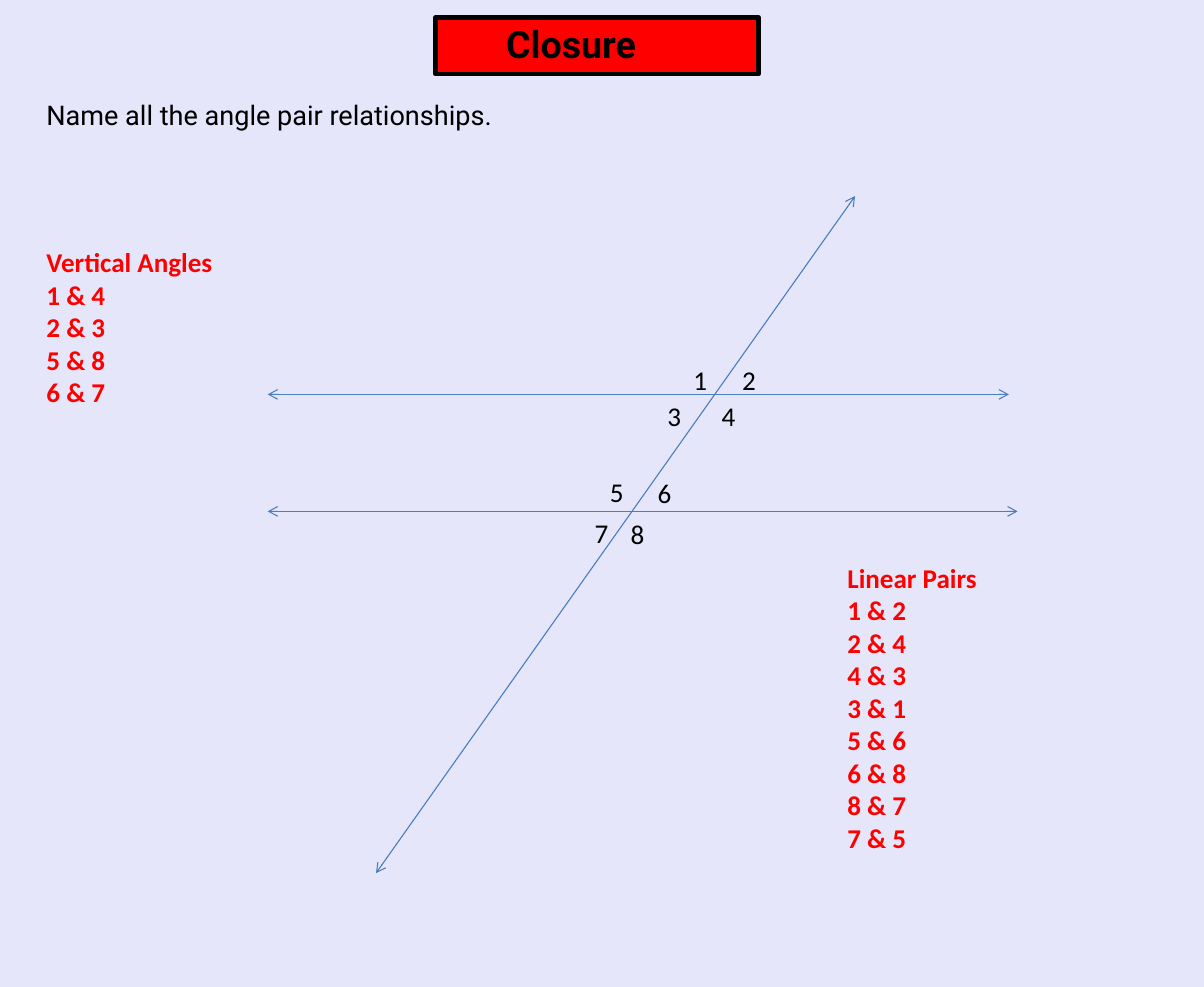
from lxml.etree import SubElement
from pptx import Presentation
from pptx.dml.color import RGBColor
from pptx.enum.shapes import MSO_CONNECTOR as Connector
from pptx.enum.text import MSO_ANCHOR as Anchor, MSO_AUTO_SIZE as AutoSize, PP_ALIGN as Align
from pptx.oxml.ns import qn
from pptx.util import Inches, Pt

COLORS = {"background": "E6E6FA", "banner": "FF0000", "ink": "000000",
          "line": "4B7EBC", "answer": "FF0000"}
TITLE = {"name": "Roboto", "size": Pt(25), "bold": True}
PROMPT = {"name": "Roboto", "size": Pt(18), "bold": False}
LABEL = {"name": "Calibri", "size": Pt(18), "bold": False}
ANSWER = {"name": "Calibri", "size": Pt(18), "bold": True}
GRID = 100  # columns across and rows down the slide

UPPER_ROW, LOWER_ROW = 39.96, 51.81
LINES = [
    ((22.23, UPPER_ROW), (83.8, UPPER_ROW)),
    ((22.23, LOWER_ROW), (84.52, LOWER_ROW)),
    ((71.02, 19.87), (31.23, 88.47)),
]
ANGLE_LABELS = {
    "1": (56.71, 36.33), "2": (60.76, 36.33),
    "3": (54.55, UPPER_ROW), "4": (59.05, UPPER_ROW),
    "5": (49.77, 47.64), "6": (53.74, 47.75),
    "7": (48.51, LOWER_ROW), "8": (51.49, 51.92),
}
VERTICAL_PAIRS = ["1 & 4", "2 & 3", "5 & 8", "6 & 7"]
LINEAR_PAIRS = ["1 & 2", "2 & 4", "4 & 3", "3 & 1",
                "5 & 6", "6 & 8", "8 & 7", "7 & 5"]


def color(name):
    return RGBColor.from_string(COLORS[name])


def apply(target, values):
    for name, value in values.items():
        setattr(target, name, value)


class LessonSlide:
    """Style and current slide; positions are in grid columns and rows."""

    def __init__(self, presentation):
        self.column = presentation.slide_width / GRID
        self.row = presentation.slide_height / GRID
        self.slide = presentation.slides.add_slide(presentation.slide_layouts[5])
        fill = self.slide.background.fill
        fill.solid()
        fill.fore_color.rgb = color("background")

    def point(self, column, row):
        return round(column * self.column), round(row * self.row)

    def fill_frame(self, frame, lines, style, ink="ink"):
        for index, line in enumerate(lines):
            paragraph = frame.add_paragraph() if index else frame.paragraphs[0]
            paragraph.alignment = Align.LEFT
            run = paragraph.add_run()
            run.text = line
            apply(run.font, style)
            run.font.color.rgb = color(ink)

    def title(self, text, position, size):
        shape = self.slide.shapes.title
        left, top = self.point(*position)
        width, height = self.point(*size)
        apply(shape, {"left": left, "top": top, "width": width, "height": height})
        shape.fill.solid()
        shape.fill.fore_color.rgb = color("banner")
        shape.line.color.rgb = color("ink")
        shape.line.width = Pt(3)
        apply(shape.text_frame, {
            "auto_size": AutoSize.NONE, "vertical_anchor": Anchor.MIDDLE,
            "margin_left": Inches(0.65), "margin_top": 0,
            "margin_bottom": Inches(0.04)})
        self.fill_frame(shape.text_frame, [text], TITLE)

    def text(self, lines, position, size, style, ink="ink"):
        box = self.slide.shapes.add_textbox(*self.point(*position), *self.point(*size))
        apply(box.text_frame, {"word_wrap": True, "auto_size": AutoSize.SHAPE_TO_FIT_TEXT})
        self.fill_frame(box.text_frame, lines, style, ink)

    def double_arrow(self, start, end):
        connector = self.slide.shapes.add_connector(
            Connector.STRAIGHT, *self.point(*start), *self.point(*end))
        connector.line.color.rgb = color("line")
        connector.line.width = Pt(0.75)
        properties = connector.element.spPr
        outline = properties.find(qn("a:ln"))
        for tag in ("a:headEnd", "a:tailEnd"):
            SubElement(outline, qn(tag), type="arrow")
        SubElement(properties, qn("a:effectLst"))


def main():
    presentation = Presentation()
    apply(presentation, {"slide_width": Inches(11.11), "slide_height": Inches(9.11)})
    lesson = LessonSlide(presentation)
    lesson.title("Closure", (36.18, 1.76), (26.82, 5.76))
    lesson.text(["Name all the angle pair relationships."], (2.97, 9.44), (93.25, 4.39), PROMPT)
    for start, end in LINES:
        lesson.double_arrow(start, end)
    for label, position in ANGLE_LABELS.items():
        lesson.text([label], position, (4.5, 4.39), LABEL)
    lesson.text(["Vertical Angles", *VERTICAL_PAIRS], (2.97, 24.37), (22.23, 17.78),
                ANSWER, "answer")
    lesson.text(["Linear Pairs", *LINEAR_PAIRS], (69.49, 56.31), (25.47, 34.36),
                ANSWER, "answer")
    presentation.save("out.pptx")


if __name__ == "__main__":
    main()
